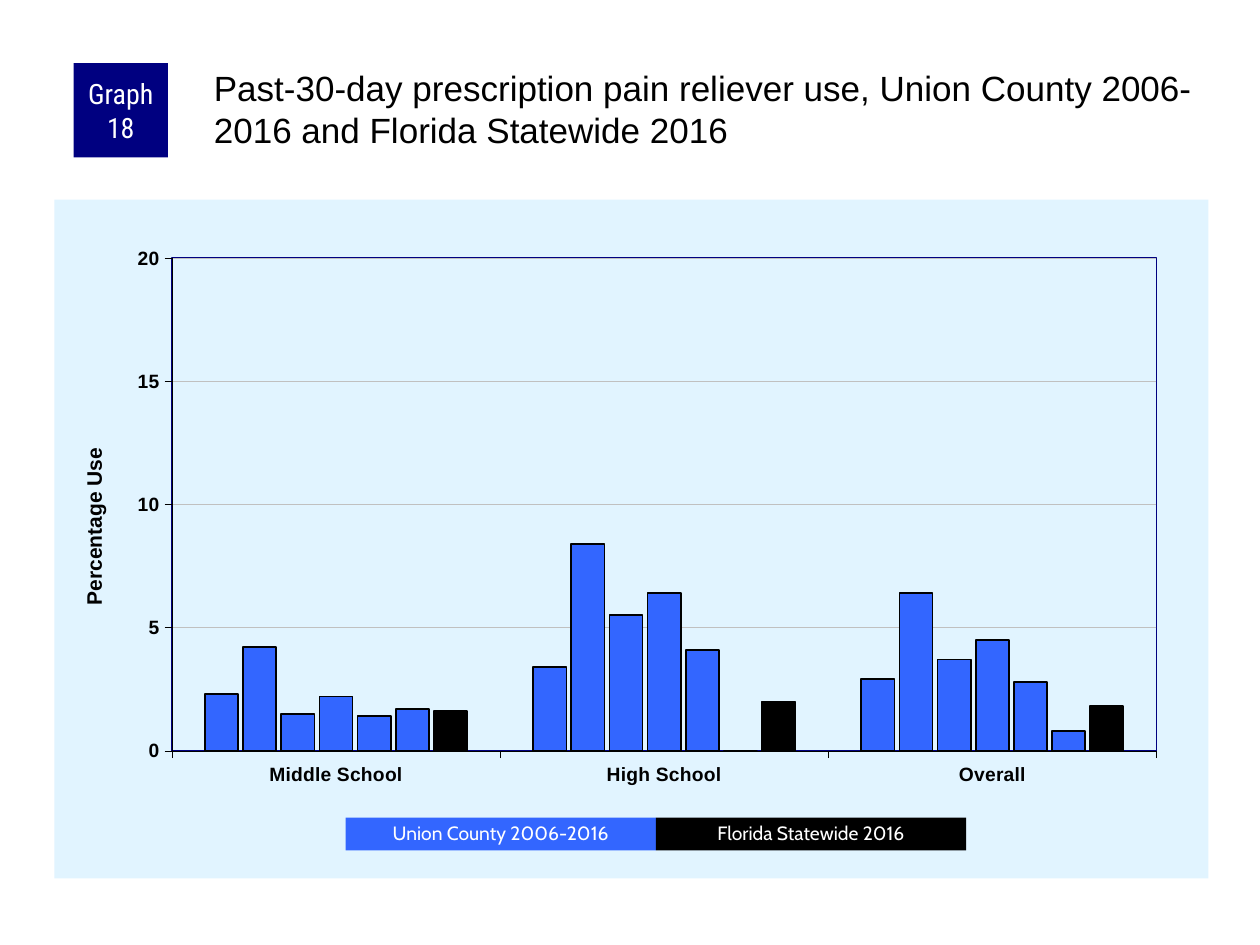
from lxml.etree import SubElement
from pptx import Presentation
from pptx.chart.data import CategoryChartData
from pptx.dml.color import RGBColor
from pptx.enum.chart import XL_CHART_TYPE as ChartType, XL_TICK_MARK as Tick
from pptx.enum.shapes import MSO_SHAPE as Shape
from pptx.enum.text import MSO_ANCHOR as Anchor, MSO_AUTO_SIZE as AutoSize, PP_ALIGN as Align
from pptx.oxml import parse_xml
from pptx.oxml.ns import nsdecls, qn
from pptx.util import Pt

BLACK = RGBColor(0x00, 0x00, 0x00)
WHITE = RGBColor(0xFF, 0xFF, 0xFF)
NAVY = RGBColor(0x00, 0x00, 0x80)
BLUE = RGBColor(0x33, 0x66, 0xFF)
PALE = RGBColor(0xE1, 0xF4, 0xFF)
GREY = RGBColor(0xC0, 0xC0, 0xC0)

SCHOOLS = ["Middle School", "High School", "Overall"]
USE = [
    (2.3, 3.4, 2.9),
    (4.2, 8.4, 6.4),
    (1.5, 5.5, 3.7),
    (2.2, 6.4, 4.5),
    (1.4, 4.1, 2.8),
    (1.7, 0, 0.8),
    (1.6, 2, 1.8),
]


def style_font(font, size, color=BLACK, name="Arial", bold=False):
    font.size = Pt(size)
    font.name = name
    font.bold = bold
    font.color.rgb = color


def style_line(line, color, width):
    line.color.rgb = color
    line.width = Pt(width)


def write_text(sp, text, size, color=BLACK, font="Arial", align=Align.CENTER,
               anchor=Anchor.MIDDLE, insets=(7.2, 3.6, 7.2, 3.6), spacing=1.0):
    tf = sp.text_frame
    tf.word_wrap = True
    tf.auto_size = AutoSize.NONE
    tf.vertical_anchor = anchor
    tf.margin_left, tf.margin_top, tf.margin_right, tf.margin_bottom = map(Pt, insets)
    p = tf.paragraphs[0]
    p.alignment = align
    p.line_spacing = spacing
    r = p.add_run()
    r.text = text
    style_font(r.font, size, color, font)


def add_title(s, text, left, top, width, height):
    sp = s.shapes.title
    sp.left, sp.top, sp.width, sp.height = map(Pt, (left, top, width, height))
    write_text(sp, text, 20, align=Align.LEFT, anchor=Anchor.TOP, insets=(2.2, 2.2, 0, 0))


def add_box(s, text, left, top, width, height, fill, **text_format):
    sp = s.shapes.add_shape(Shape.RECTANGLE, *map(Pt, (left, top, width, height)))
    sp.shadow.inherit = False
    sp.fill.solid()
    sp.fill.fore_color.rgb = fill
    sp.line.fill.background()
    write_text(sp, text, color=WHITE, **text_format)


def set_layout(parent, **values):
    layout = parent.find(qn("c:layout"))
    if layout is None:
        layout = parse_xml(f"<c:layout {nsdecls('c')}/>")
        text = parent.find(qn("c:tx"))
        parent.insert(0 if text is None else parent.index(text) + 1, layout)
    for child in list(layout):
        layout.remove(child)
    manual = SubElement(layout, qn("c:manualLayout"))
    for tag, value in values.items():
        SubElement(manual, qn(f"c:{tag}")).set("val", str(value))


def add_shape_format(parent, fill, line=None):
    outline = (f'<a:ln w="{Pt(1)}"><a:solidFill><a:srgbClr val="{line}"/></a:solidFill></a:ln>'
               if line else "<a:ln><a:noFill/></a:ln>")
    return parse_xml(f'<c:spPr {nsdecls("c", "a")}><a:solidFill><a:srgbClr val="{fill}"/>'
                     f"</a:solidFill>{outline}</c:spPr>")


def style_axis(axis):
    axis.major_tick_mark = Tick.OUTSIDE
    axis.minor_tick_mark = Tick.NONE
    style_font(axis.tick_labels.font, 11, bold=True)
    style_line(axis.format.line, BLACK, 0.25)


def style_value_axis(axis):
    style_axis(axis)
    axis.minimum_scale, axis.maximum_scale, axis.major_unit = 0, 20, 5
    axis.tick_labels.number_format = "0"
    axis.tick_labels.number_format_is_linked = False
    axis.has_major_gridlines = True
    style_line(axis.major_gridlines.format.line, GREY, 0.25)
    title = axis.axis_title
    r = title.text_frame.paragraphs[0].add_run()
    r.text = "Percentage Use"
    style_font(r.font, 12, bold=True)
    title.text_frame._txBody.bodyPr.set("rot", "-5400000")
    title.text_frame._txBody.bodyPr.set("vert", "horz")
    set_layout(title._element, xMode="edge", yMode="edge", x=0.02, y=0.36)


def add_use_chart(s, left, top, width, height):
    data = CategoryChartData()
    data.categories = SCHOOLS
    for number, values in enumerate(USE, 1):
        data.add_series(f"Series {number}", values)
    frame = s.shapes.add_chart(ChartType.COLUMN_CLUSTERED,
                               *map(Pt, (left, top, width, height)), data)
    chart = frame.chart
    chart.has_legend = False
    chart.has_title = False
    style_font(chart.font, 8)

    plot = chart.plots[0]
    plot.gap_width, plot.overlap = 200, -15
    plot.vary_by_categories = False
    for series in plot.series:
        series.format.fill.solid()
        series.format.fill.fore_color.rgb = BLUE
        style_line(series.format.line, BLACK, 1)
    plot.series[-1].format.fill.fore_color.rgb = BLACK

    style_axis(chart.category_axis)
    style_value_axis(chart.value_axis)

    space = chart._chartSpace
    area = space.chart.plotArea
    set_layout(area, layoutTarget="inner", xMode="edge", yMode="edge",
               x=0.102, y=0.086, w=0.853, h=0.726)
    area.append(add_shape_format(area, PALE, NAVY))
    space.chart.addnext(add_shape_format(space, PALE))


def main():
    prs = Presentation()
    prs.slide_width, prs.slide_height = Pt(720), Pt(540)
    s = prs.slides.add_slide(prs.slide_layouts[5])
    add_title(s, "Past-30-day prescription pain reliever use, Union County 2006-2016 "
                 "and Florida Statewide 2016", 120, 36, 570, 60)
    add_use_chart(s, 31, 114, 659.5, 388)
    add_box(s, "Graph 18", 42, 36, 54, 54, NAVY, size=16,
            font="Roboto Condensed", insets=(3.6, 0, 3.6, 0))
    keys = [("Union County 2006-2016", BLUE), ("Florida Statewide 2016", BLACK)]
    for i, (label, fill) in enumerate(keys):
        add_box(s, label, 197.5 + i * 177.3, 467.2, 177.3, 18.7, fill,
                size=11, font="Cabin", spacing=0.9)
    prs.save("out.pptx")


if __name__ == "__main__":
    main()
